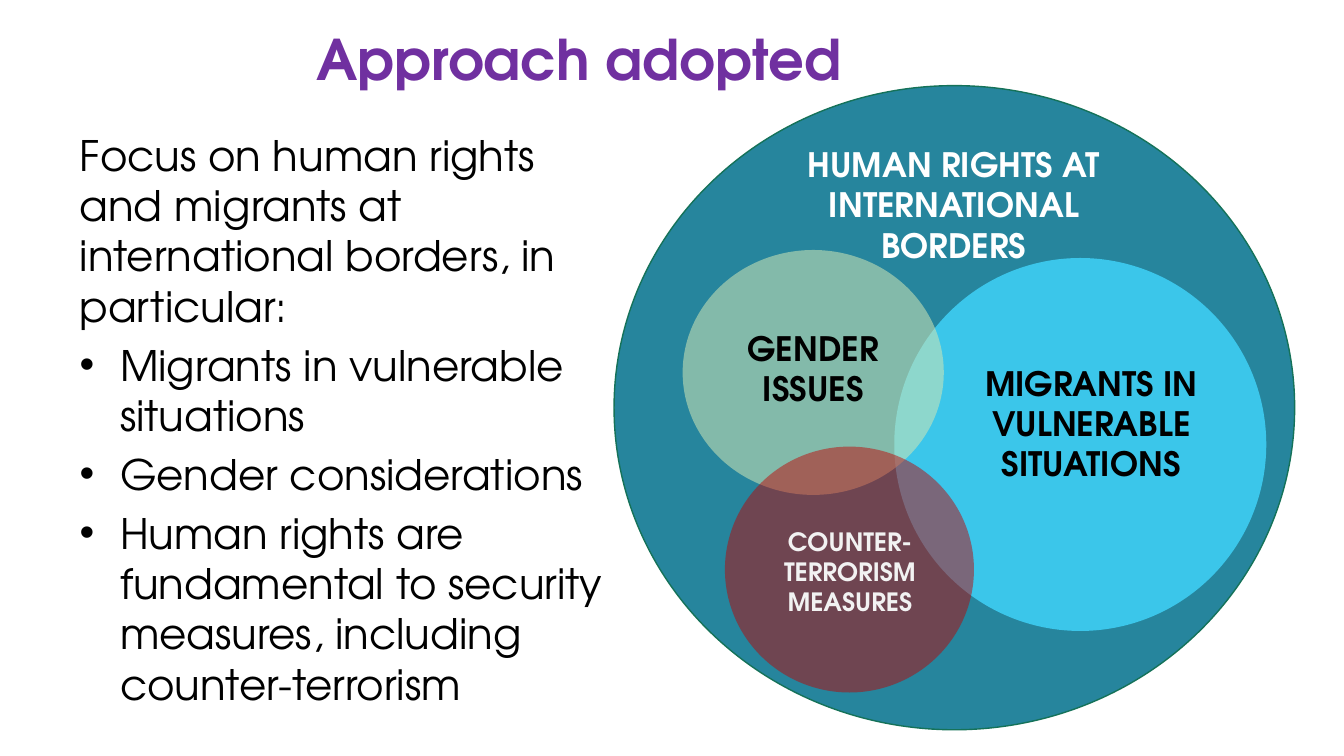
"""Build the slide on the approach adopted: a list beside nested circles."""
from dataclasses import dataclass

from lxml import etree
from pptx import Presentation
from pptx import util as u
from pptx.dml.color import RGBColor
from pptx.enum import shapes, text
from pptx.oxml import ns


@dataclass(frozen=True)
class Theme:
    font: str = "TeX Gyre Adventor"
    head: str = "7030A0"
    ink: str = "000000"
    white: str = "FFFFFF"
    pale: str = "F2F2F2"
    teal: str = "26859D"
    edge: str = "157259"
    sky: str = "3BC6EA"
    green: str = "D1E6B5"
    red: str = "C00000"
    title: int = 40
    body: int = 30
    label: int = 24
    small: int = 18


T = Theme()
WIDE, HIGH = 13.33, 7.5
HEAD = "Approach adopted"
LEAD = "Focus on human rights and migrants at international borders, in particular:"
POINTS = [
    "Migrants in vulnerable situations",
    "Gender considerations",
    "Human rights are fundamental to security measures, including counter-terrorism",
]

# Boxes are left, top, width and height in percent of the slide.
HEAD_BOX = (8.33, 2.8, 69.47, 10.13)
BODY_BOX = (5.18, 16.4, 41.49, 77.33)
CIRCLES = [
    ((45.69, 11.33, 50.64, 85.2), T.teal, 100, T.edge),
    ((66.54, 34.13, 27.68, 49.33), T.sky, 100, None),
    ((50.79, 33.07, 19.43, 32.4), T.green, 55, None),
    ((53.94, 59.07, 18.53, 32.53), T.red, 48, None),
]
LABELS = [
    ("HUMAN RIGHTS AT INTERNATIONAL BORDERS", (55.44, 18.4, 31.06, 17.47), T.label, T.white),
    ("MIGRANTS IN VULNERABLE SITUATIONS", (71.19, 47.33, 20.03, 17.47), T.label, T.ink),
    ("GENDER ISSUES", (54.31, 42.67, 12.38, 12.13), T.label, T.ink),
    ("COUNTER- TERRORISM MEASURES", (56.26, 68.93, 13.95, 13.47), T.small, T.pale),
]


def rgb(code):
    return RGBColor.from_string(code)


def place(box):
    return [u.Inches(part * side / 100) for part, side in zip(box, (WIDE, HIGH) * 2)]


def move(shape, box):
    shape.left, shape.top, shape.width, shape.height = place(box)


def setup(frame):
    frame.word_wrap = True
    frame.auto_size = text.MSO_AUTO_SIZE.NONE
    return frame


def write(para, words, size, color, bold=False):
    run = para.add_run()
    run.text = words
    font = run.font
    font.name, font.size, font.bold = T.font, u.Pt(size), bold
    font.color.rgb = rgb(color)


def bullet(para, mark):
    props = para._p.get_or_add_pPr()
    gap = u.Inches(0.4) if mark else 0
    props.set("marL", str(gap))
    props.set("indent", str(-gap))
    if mark:
        etree.SubElement(props, ns.qn("a:buChar"), char=mark)
    else:
        etree.SubElement(props, ns.qn("a:buNone"))


def heading(slide):
    title = slide.shapes.title
    move(title, HEAD_BOX)
    frame = setup(title.text_frame)
    frame.vertical_anchor = text.MSO_ANCHOR.BOTTOM
    para = frame.paragraphs[0]
    para.alignment, para.line_spacing = text.PP_ALIGN.CENTER, 0.9
    write(para, HEAD, T.title, T.head, True)


def listing(slide):
    body = slide.placeholders[1]
    move(body, BODY_BOX)
    frame = setup(body.text_frame)
    for row, words in enumerate([LEAD, *POINTS]):
        para = frame.add_paragraph() if row else frame.paragraphs[0]
        para.space_before, para.space_after = u.Pt(0), u.Pt(6)
        bullet(para, "•" if row else None)
        write(para, words, T.body, T.ink)


def circle(slide, box, color, alpha, edge):
    disc = slide.shapes.add_shape(shapes.MSO_SHAPE.OVAL, *place(box))
    disc.shadow.inherit = False
    disc.fill.solid()
    disc.fill.fore_color.rgb = rgb(color)
    if alpha < 100:
        tint = disc._element.spPr.find(".//" + ns.qn("a:srgbClr"))
        etree.SubElement(tint, ns.qn("a:alpha"), val=str(alpha * 1000))
    if edge:
        disc.line.color.rgb = rgb(edge)
        disc.line.width = u.Pt(1)
    else:
        disc.line.fill.background()


def label(slide, words, box, size, color):
    frame = setup(slide.shapes.add_textbox(*place(box)).text_frame)
    para = frame.paragraphs[0]
    para.alignment = text.PP_ALIGN.CENTER
    write(para, words, size, color, True)


def main():
    deck = Presentation()
    deck.slide_width, deck.slide_height = u.Inches(WIDE), u.Inches(HIGH)
    slide = deck.slides.add_slide(deck.slide_layouts[1])
    heading(slide)
    listing(slide)
    for item in CIRCLES:
        circle(slide, *item)
    for item in LABELS:
        label(slide, *item)
    deck.save("out.pptx")


if __name__ == "__main__":
    main()
